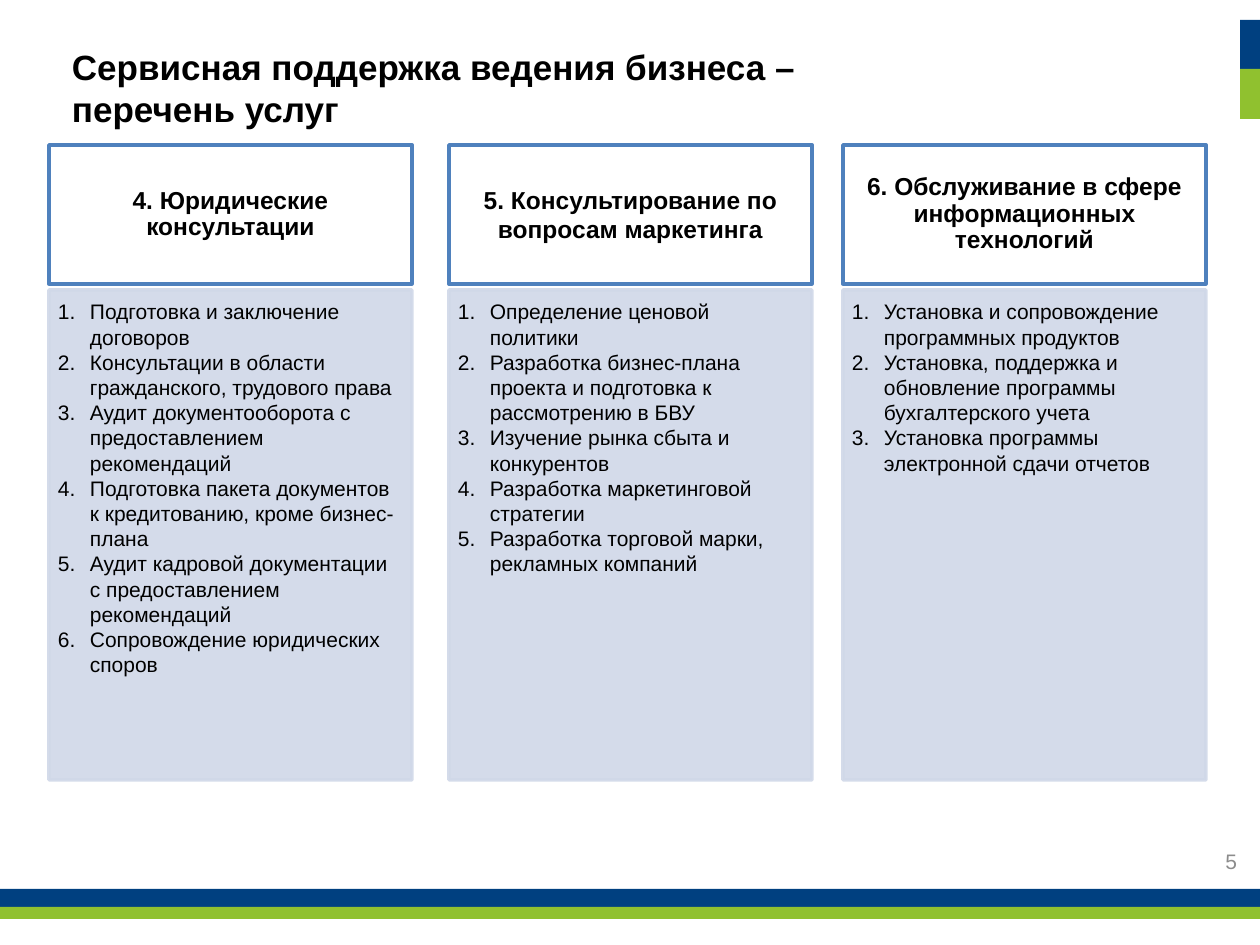
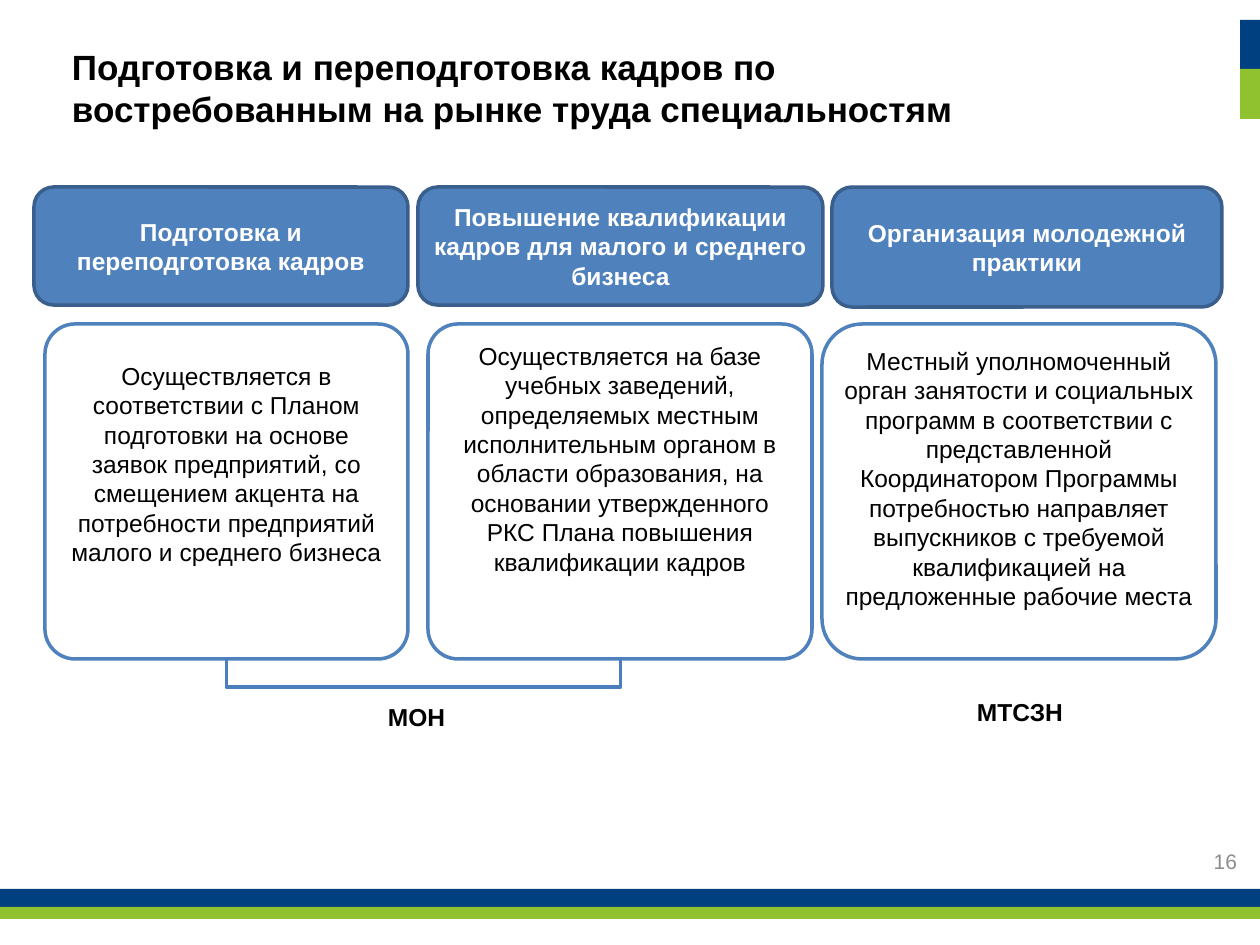
"""Build two slides on business support services and staff training."""
from lxml.etree import SubElement
from pptx import Presentation
from pptx.dml.color import RGBColor
from pptx.enum.shapes import MSO_CONNECTOR, MSO_SHAPE
from pptx.enum.text import MSO_ANCHOR, PP_ALIGN
from pptx.oxml.ns import qn
from pptx.util import Emu, Pt

PX = 914400 / 126
FONT = "Arial"
COLORS = {
    "navy": "004080", "green": "90C12F", "blue": "4F81BD", "dark_blue": "3A5F8C",
    "connector": "4B7EBC", "panel": "D0D8E8", "white": "FFFFFF", "black": "000000",
    "gray": "8C8C8C",
}


def add_box(page, geometry, area, fill, line=None, corner=None):
    """Add a flat preset shape; area is left, top, width, height in px."""
    box = page.shapes.add_shape(geometry, *(Emu(round(side * PX)) for side in area))
    box.shadow.inherit = False
    box.fill.solid()
    box.fill.fore_color.rgb = RGBColor.from_string(COLORS[fill])
    if line:
        box.line.color.rgb = RGBColor.from_string(COLORS[line])
        box.line.width = Pt(2)
    else:
        box.line.fill.background()
    if corner:
        box.adjustments[0] = corner
    return box


def write(box, lines, size, color="black", bold=False, align=PP_ALIGN.CENTER,
          anchor=MSO_ANCHOR.MIDDLE, margins=(13, 6, 13, 6), numbered=False, spacing=None):
    """Fill a shape with paragraphs in one style; margins are in px."""
    frame = box.text_frame
    frame.word_wrap = True
    frame.vertical_anchor = anchor
    (frame.margin_left, frame.margin_top, frame.margin_right,
     frame.margin_bottom) = (Emu(round(margin * PX)) for margin in margins)
    frame.text = "\n".join(lines)
    for para in frame.paragraphs:
        para.alignment = align
        if spacing:
            para.line_spacing = spacing
        if numbered:
            properties = para._p.get_or_add_pPr()
            properties.set("marL", str(round(32 * PX)))
            properties.set("indent", str(round(-32 * PX)))
            SubElement(properties, qn("a:buAutoNum"), type="arabicPeriod")
        for span in para.runs:
            span.font.name = FONT
            span.font.size = Pt(size)
            span.font.bold = bold
            span.font.color.rgb = RGBColor.from_string(COLORS[color])


deck = Presentation()
deck.slide_width = Emu(round(1260 * PX))
deck.slide_height = Emu(round(945 * PX))

bands = [
    ((0, 889, 1260, 19), "navy"),
    ((0, 907, 1260, 12), "green"),
    ((1240, 20, 20, 49), "navy"),
    ((1240, 69, 20, 50), "green"),
]
page_heads = [
    ("Сервисная поддержка ведения бизнеса – перечень услуг", 833, "5"),
    ("Подготовка и переподготовка кадров по востребованным на рынке труда специальностям",
     1004, "16"),
]
pages = []
for title, title_width, number in page_heads:
    page = deck.slides.add_slide(deck.slide_layouts[6])
    for area, color in bands:
        add_box(page, MSO_SHAPE.RECTANGLE, area, color)
    title_area = [Emu(round(side * PX)) for side in (59, 39, title_width, 97)]
    write(page.shapes.add_textbox(*title_area), [title], 20, bold=True,
          align=PP_ALIGN.LEFT, anchor=MSO_ANCHOR.TOP)
    number_area = [Emu(round(side * PX)) for side in (956, 836, 294, 50)]
    write(page.shapes.add_textbox(*number_area), [number], 12, "gray", align=PP_ALIGN.RIGHT)
    pages.append(page)
services_page, training_page = pages

services = [
    (49, "4. Юридические консультации", 0.9, [
        "Подготовка и заключение договоров",
        "Консультации в области гражданского, трудового права",
        "Аудит документооборота с предоставлением рекомендаций",
        "Подготовка пакета документов к кредитованию, кроме бизнес-плана",
        "Аудит кадровой документации с предоставлением рекомендаций",
        "Сопровождение юридических споров",
    ]),
    (449, "5. Консультирование по вопросам маркетинга", None, [
        "Определение ценовой политики",
        "Разработка бизнес-плана проекта и подготовка к рассмотрению в БВУ",
        "Изучение рынка сбыта и конкурентов",
        "Разработка маркетинговой стратегии",
        "Разработка торговой марки, рекламных компаний",
    ]),
    (843, "6. Обслуживание в сфере информационных технологий", 0.9, [
        "Установка и сопровождение программных продуктов",
        "Установка, поддержка и обновление программы бухгалтерского учета",
        "Установка программы электронной сдачи отчетов",
    ]),
]
for left, heading, spacing, items in services:
    header = add_box(services_page, MSO_SHAPE.RECTANGLE, (left, 145, 363, 139), "white", "blue")
    write(header, [heading], 14, bold=True, margins=(14, 8, 14, 8), spacing=spacing)
    panel = add_box(services_page, MSO_SHAPE.RECTANGLE, (left, 290, 363, 490), "panel", "panel")
    for color in panel._element.spPr.iter(qn("a:srgbClr")):
        SubElement(color, qn("a:alpha"), val="90000")
    write(panel, items, 12, align=PP_ALIGN.LEFT, anchor=MSO_ANCHOR.TOP,
          margins=(9, 9, 11, 13), numbered=True)

programs = [
    ((34, 187, 374, 118), "Подготовка и переподготовка кадров",
     (45, 324, 363, 335), 0.09, 28, [
         "Осуществляется в",
         "соответствии с Планом подготовки на основе заявок предприятий, со смещением "
         "акцента на потребности предприятий малого и среднего бизнеса"]),
    ((418, 187, 405, 118), "Повышение квалификации кадров для малого и среднего бизнеса",
     (428, 324, 384, 335), 0.09, 8, [
         "Осуществляется на базе учебных заведений, определяемых местным исполнительным "
         "органом в области образования, на основании утвержденного РКС Плана повышения "
         "квалификации кадров"]),
    ((832, 187, 390, 120), "Организация молодежной практики",
     (822, 324, 394, 335), 0.12, 10, [
         "Местный уполномоченный орган занятости и социальных программ в соответствии с "
         "представленной Координатором Программы потребностью направляет выпускников с "
         "требуемой квалификацией на предложенные рабочие места"]),
]
for header_area, heading, card_area, corner, top_margin, lines in programs:
    header = add_box(training_page, MSO_SHAPE.ROUNDED_RECTANGLE, header_area, "blue", "dark_blue")
    write(header, [heading], 14, "white", bold=True, margins=(10, 10, 10, 10))
    card = add_box(training_page, MSO_SHAPE.ROUNDED_RECTANGLE, card_area, "white", "blue", corner)
    write(card, lines, 14, anchor=MSO_ANCHOR.TOP, margins=(10, top_margin, 10, 10))

for ministry, area in [("МОН", (364, 696, 105, 43)), ("МТСЗН", (937, 691, 166, 43))]:
    label = training_page.shapes.add_textbox(*(Emu(round(side * PX)) for side in area))
    write(label, [ministry], 14, bold=True, anchor=MSO_ANCHOR.TOP)

bracket = training_page.shapes.add_connector(
    MSO_CONNECTOR.ELBOW, *(Emu(round(side * PX)) for side in (424, 462, 423, 856)))
bracket.line.color.rgb = RGBColor.from_string(COLORS["connector"])
bracket.line.width = Pt(2)
properties = bracket._element.spPr
properties.find(qn("a:xfrm")).set("rot", "16200000")
adjustments = properties.find(qn("a:prstGeom")).find(qn("a:avLst"))
SubElement(adjustments, qn("a:gd"), name="adj1", fmla="val 2900000")
SubElement(properties, qn("a:effectLst"))

deck.save("out.pptx")
